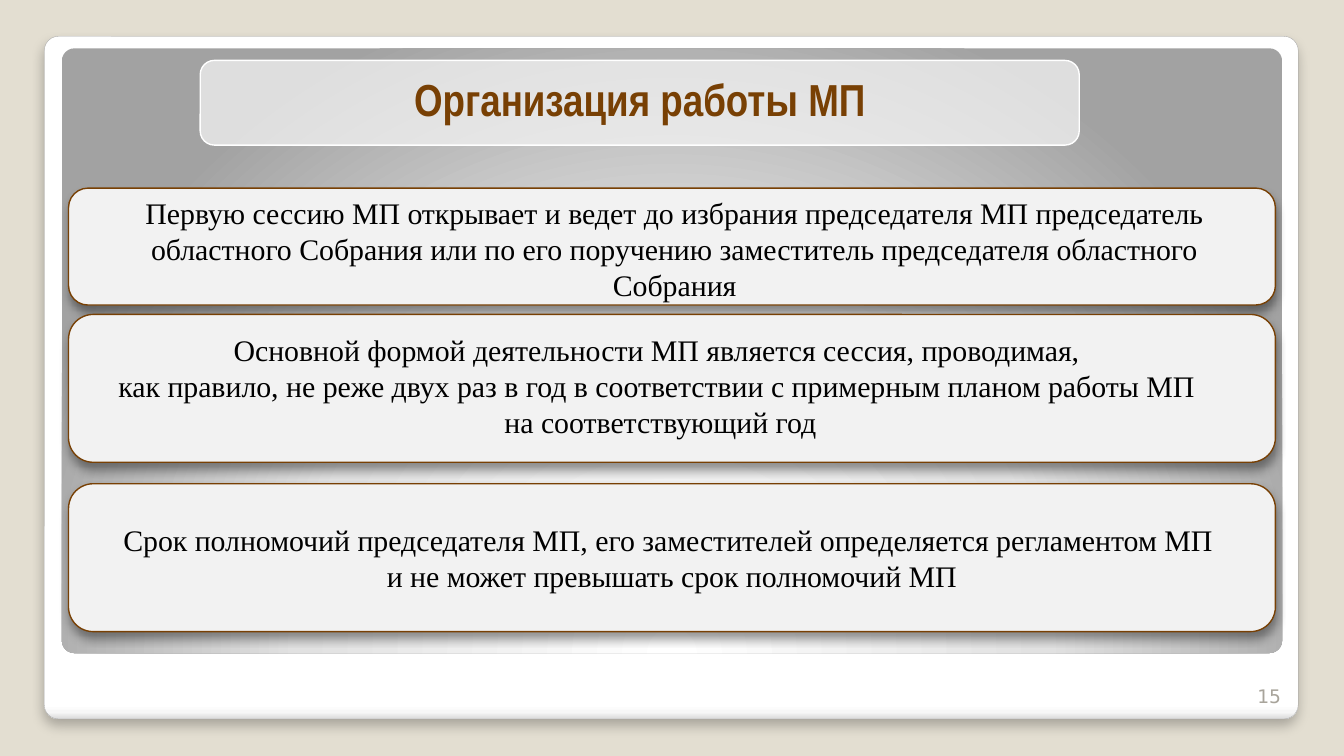
from dataclasses import dataclass

from lxml import etree
from pptx import Presentation
from pptx.dml.color import RGBColor
from pptx.enum import shapes as sh, text as tx
from pptx.oxml import parse_xml
from pptx.oxml.ns import nsdecls, qn
from pptx.util import Inches, Pt

COLORS = {
    "page": "E3DED1", "white": "FFFFFF", "edge": "A4A4A4", "card": "F2F2F2",
    "brown": "784004", "black": "000000", "number": "A8A49B",
}
SERIF = "Times New Roman"
ROUND = sh.MSO_SHAPE.ROUNDED_RECTANGLE
CARD = sh.MSO_SHAPE.FLOWCHART_ALTERNATE_PROCESS
MIDDLE, TOP = tx.MSO_ANCHOR.MIDDLE, tx.MSO_ANCHOR.TOP


@dataclass
class Box:
    left: float
    top: float
    width: float
    height: float

    def place(self) -> list:
        return [Inches(v) for v in (self.left, self.top, self.width, self.height)]


@dataclass
class Shadow:
    alpha: int
    blur: float
    dist: float


@dataclass
class Item:
    card: Box
    label: Box
    words: str
    anchor: object = TOP


def rgb(name: str) -> RGBColor:
    return RGBColor.from_string(COLORS[name])


def panel(slide, kind, box: Box, fill=None, line=None, weight=0.75,
          adj=None, shadow=None):
    shape = slide.shapes.add_shape(kind, *box.place())
    shape.shadow.inherit = False
    if adj is not None:
        shape.adjustments[0] = adj
    if fill:
        shape.fill.solid()
        shape.fill.fore_color.rgb = rgb(fill)
    if line:
        shape.line.color.rgb = rgb(line)
        shape.line.width = Pt(weight)
    else:
        shape.line.fill.background()
    if shadow:
        shade(shape, shadow)
    return shape


def shade(shape, shadow: Shadow) -> None:
    effects = shape._element.spPr.find(qn("a:effectLst"))
    effects.append(parse_xml(
        f'<a:outerShdw {nsdecls("a")} blurRad="{Pt(shadow.blur)}" '
        f'dist="{Pt(shadow.dist)}" dir="5400000" algn="t" rotWithShape="0">'
        f'<a:srgbClr val="{COLORS["black"]}"><a:alpha val="{shadow.alpha * 1000}"/>'
        '</a:srgbClr></a:outerShdw>'))


def blend(shape, stops: list, way: str) -> None:
    """Give the shape a gradient; way is its a:lin or a:path element."""
    marks = "".join(f'<a:gs pos="{pos * 1000}"><a:srgbClr val="{tone}"/></a:gs>'
                    for pos, tone in stops)
    shape.fill.background()
    props = shape._element.spPr
    props.replace(props.find(qn("a:noFill")), parse_xml(
        f'<a:gradFill {nsdecls("a")} rotWithShape="1"><a:gsLst>{marks}</a:gsLst>'
        f'{way}</a:gradFill>'))


def write(shape, words: str, *, size=16, font=SERIF, color="black", bold=False,
          align=tx.PP_ALIGN.CENTER, anchor=TOP) -> None:
    frame = shape.text_frame
    frame.word_wrap = True
    frame.auto_size = tx.MSO_AUTO_SIZE.NONE
    frame.vertical_anchor = anchor
    para = frame.paragraphs[0]
    para.text = words
    para.alignment = align
    for run in para.runs:
        run.font.size, run.font.name, run.font.bold = Pt(size), font, bold
        run.font.color.rgb = rgb(color)


def label(slide, box: Box, words: str, **style) -> None:
    write(slide.shapes.add_textbox(*box.place()), words, **style)


def banner(slide, box: Box, words: str) -> None:
    plate = panel(slide, ROUND, box, fill="card", line="white")
    tone = plate._element.spPr.find(qn("a:solidFill"))[0]
    etree.SubElement(tone, qn("a:alpha")).set("val", "76000")
    title = slide.shapes.title
    title.left, title.top, title.width, title.height = box.place()
    title.top -= Inches(0.03)
    write(title, words, size=24, font="Arial Narrow", color="brown", bold=True,
          anchor=MIDDLE)
    # Bring the title in front of its plate
    slide.shapes._spTree.append(title._element)


LAST = Box(0.51, 3.6, 8.98, 1.1)
ITEMS = [
    Item(Box(0.51, 1.4, 8.98, 0.87), Box(0.57, 1.4, 8.9, 0.91),
         "Первую сессию МП открывает и ведет до избрания председателя МП "
         "председатель областного Собрания или по его поручению заместитель "
         "председателя областного Собрания"),
    Item(Box(0.51, 2.34, 8.98, 1.1), Box(0.35, 2.42, 9.13, 0.91),
         "Основной формой деятельности МП является сессия, проводимая, \n"
         "как правило, не реже двух раз в год в соответствии с примерным "
         "планом работы МП \nна соответствующий год"),
    Item(LAST, LAST,
         "Срок полномочий председателя МП, его заместителей определяется "
         "регламентом МП \nи не может превышать срок полномочий МП", MIDDLE),
]


def main() -> None:
    deck = Presentation()
    deck.slide_width = Inches(10)
    deck.slide_height = deck.slide_width * 9 // 16
    slide = deck.slides.add_slide(deck.slide_layouts[5])
    slide.background.fill.solid()
    slide.background.fill.fore_color.rgb = rgb("page")

    # White sheet and grey panel
    sheet = panel(slide, ROUND, Box(0.33, 0.27, 9.33, 5.08), line="edge",
                  weight=0.16, adj=0.021, shadow=Shadow(25, 6, 4))
    blend(sheet, [(0, "FFFFFF"), (98, "FFFFFF"), (99, "F7F7F7"), (100, "DADADA")],
          '<a:lin ang="5400000" scaled="0"/>')
    back = panel(slide, ROUND, Box(0.46, 0.36, 9.08, 4.5), adj=0.021)
    blend(back, [(0, "FFFFFF"), (55, "E1E1E1"), (100, "A2A2A2")],
          '<a:path path="circle"><a:fillToRect l="50000" t="175000" '
          'r="50000" b="-75000"/></a:path>')

    # Title
    banner(slide, Box(1.49, 0.45, 6.54, 0.63), "Организация работы МП")

    # Cards with their text
    for item in ITEMS:
        card = panel(slide, CARD, item.card, fill="card", line="brown",
                     shadow=Shadow(40, 5.2, 3))
        if item.label is item.card:
            write(card, item.words, anchor=item.anchor)
        else:
            label(slide, item.label, item.words, anchor=item.anchor)

    # Slide number
    label(slide, Box(9.13, 5.01, 0.5, 0.3), "15", size=10, font="DejaVu Sans",
          color="number", align=tx.PP_ALIGN.RIGHT, anchor=tx.MSO_ANCHOR.BOTTOM)

    deck.save("out.pptx")


if __name__ == "__main__":
    main()
